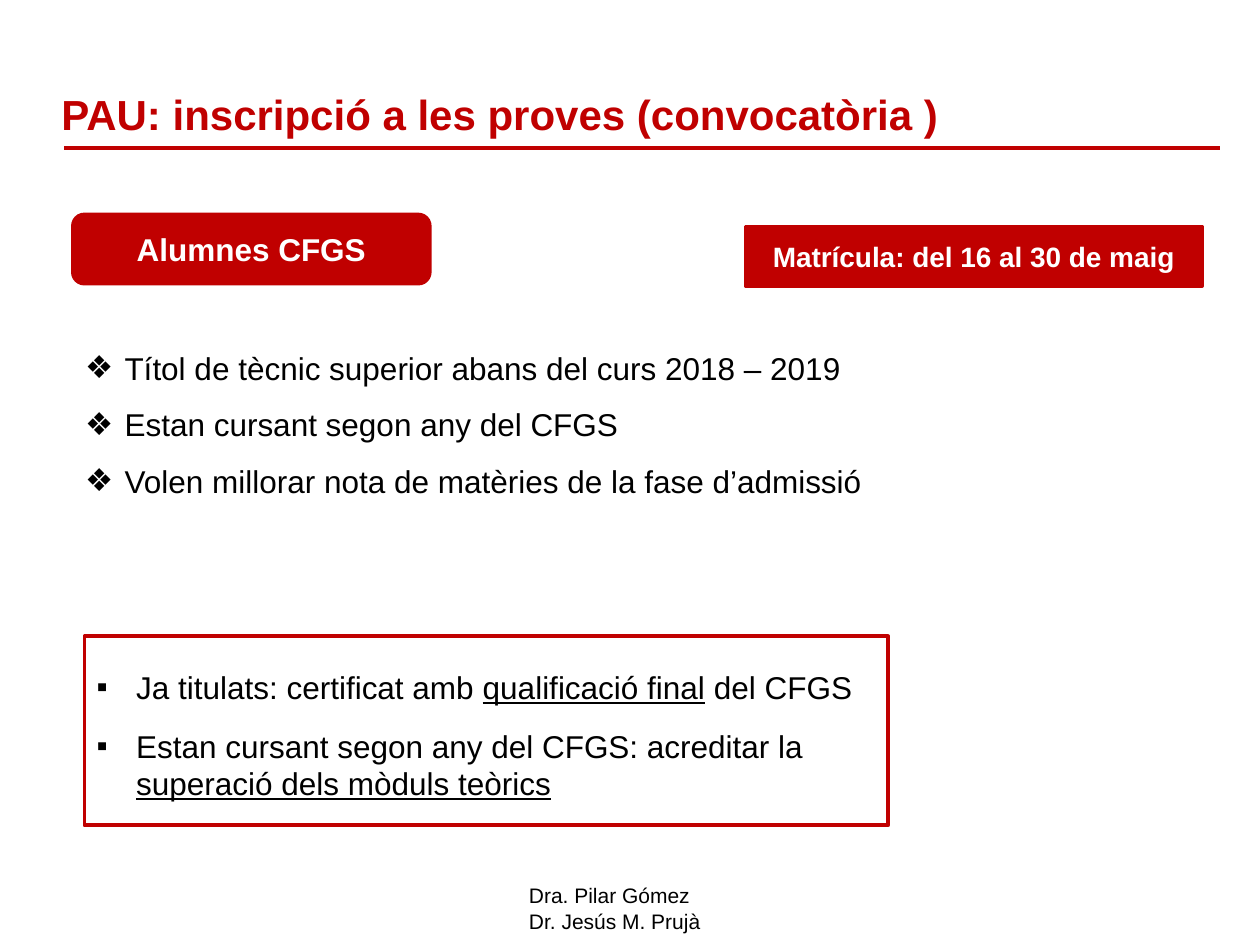
from lxml import etree
from pptx import Presentation
from pptx import util as u
from pptx.dml.color import RGBColor
from pptx.enum import shapes, text
from pptx.oxml import ns

COLORS = {"red": "C00000", "white": "FFFFFF", "black": "000000"}
FONT = "Arial"


def color(name):
    return RGBColor.from_string(COLORS[name])


def style_font(font, size, name, bold=False):
    font.name, font.size, font.bold = FONT, u.Pt(size), bold
    font.color.rgb = color(name)


def add_bullet(para, mark, indent=22.5):
    props = para._p.get_or_add_pPr()
    props.set("marL", str(u.Pt(indent)))
    props.set("indent", str(-u.Pt(indent)))
    etree.SubElement(props, ns.qn("a:buFont")).set("typeface", FONT)
    etree.SubElement(props, ns.qn("a:buChar")).set("char", mark)


def add_text_box(page, box):
    frame = page.shapes.add_textbox(*map(u.Pt, box)).text_frame
    frame.word_wrap = True
    return frame


def add_panel(page, box, kind, fill=None):
    panel = page.shapes.add_shape(kind, *map(u.Pt, box))
    panel.shadow.inherit = False
    if fill:
        panel.fill.solid()
        panel.fill.fore_color.rgb = color(fill)
    else:
        panel.fill.background()
    panel.line.color.rgb = color("red")
    panel.line.width = u.Pt(2)
    return panel


def add_title(page, box, title):
    left, top, width, height = box
    # Rule under the title
    rule = page.shapes.add_connector(
        shapes.MSO_CONNECTOR.STRAIGHT,
        u.Pt(left + 8.6), u.Pt(top + 39), u.Pt(left + width - 6), u.Pt(top + 39))
    rule.line.color.rgb = color("red")
    rule.line.width = u.Pt(2.25)
    etree.SubElement(rule._element.spPr, ns.qn("a:effectLst"))
    # Title text
    frame = add_text_box(page, box)
    frame.vertical_anchor = text.MSO_ANCHOR.MIDDLE
    frame.text = title
    style_font(frame.paragraphs[0].runs[0].font, 24, "red", True)


def add_label(page, box, kind, label, size):
    frame = add_panel(page, box, kind, "red").text_frame
    frame.vertical_anchor = text.MSO_ANCHOR.MIDDLE
    frame.text = label
    para = frame.paragraphs[0]
    para.alignment = text.PP_ALIGN.CENTER
    style_font(para.runs[0].font, size, "white", True)


def add_profiles(page, box, items):
    frame = add_text_box(page, box)
    frame.text = "\n".join(items)
    for para in frame.paragraphs:
        add_bullet(para, "❖")
        para.line_spacing = 1.5
        style_font(para.runs[0].font, 18, "black")


def add_documents(page, box, items):
    """Framed list; each item is a list of (words, underlined), None breaks the line."""
    left, top, width, height = box
    add_panel(page, box, shapes.MSO_SHAPE.RECTANGLE)
    frame = add_text_box(page, (left, top + 14.4, width + 5, height - 23))
    for index, item in enumerate(items):
        para = frame.add_paragraph() if index else frame.paragraphs[0]
        add_bullet(para, "▪")
        para.space_before = u.Pt(6 if index else 0)
        para.space_after = u.Pt(6)
        for part in item:
            if part is None:
                para.add_line_break()
                continue
            span = para.add_run()
            span.text, span.font.underline = part
            style_font(span.font, 18, "black")


def add_authors(page, box, names):
    frame = add_text_box(page, box)
    frame.text = "\n".join(names)
    for para in frame.paragraphs:
        style_font(para.runs[0].font, 12, "black")


def main():
    deck = Presentation()
    deck.slide_width, deck.slide_height = u.Pt(720), u.Pt(540)
    page = deck.slides.add_slide(deck.slide_layouts[6])

    add_authors(page, (295.2, 501, 114, 36), ["Dra. Pilar Gómez", "Dr. Jesús M. Prujà"])
    add_title(page, (28, 45.4, 675, 39.6), "PAU: inscripció a les proves (convocatòria )")
    add_label(page, (41.6, 122.5, 204, 39.6), shapes.MSO_SHAPE.ROUNDED_RECTANGLE,
              "Alumnes CFGS", 18)
    add_label(page, (426, 129.5, 261, 34), shapes.MSO_SHAPE.RECTANGLE,
              "Matrícula: del 16 al 30 de maig", 16)
    add_profiles(page, (41.6, 185, 556.6, 105), [
        "Títol de tècnic superior abans del curs 2018 – 2019",
        "Estan cursant segon any del CFGS",
        "Volen millorar nota de matèries de la fase d’admissió",
    ])
    add_documents(page, (48.2, 363.6, 459.4, 108), [
        [("Ja titulats: certificat amb ", False), ("qualificació final", True),
         (" del CFGS", False)],
        [("Estan cursant segon any del CFGS: acreditar la", False), None,
         ("superació dels mòduls teòrics", True)],
    ])
    deck.save("out.pptx")


if __name__ == "__main__":
    main()
